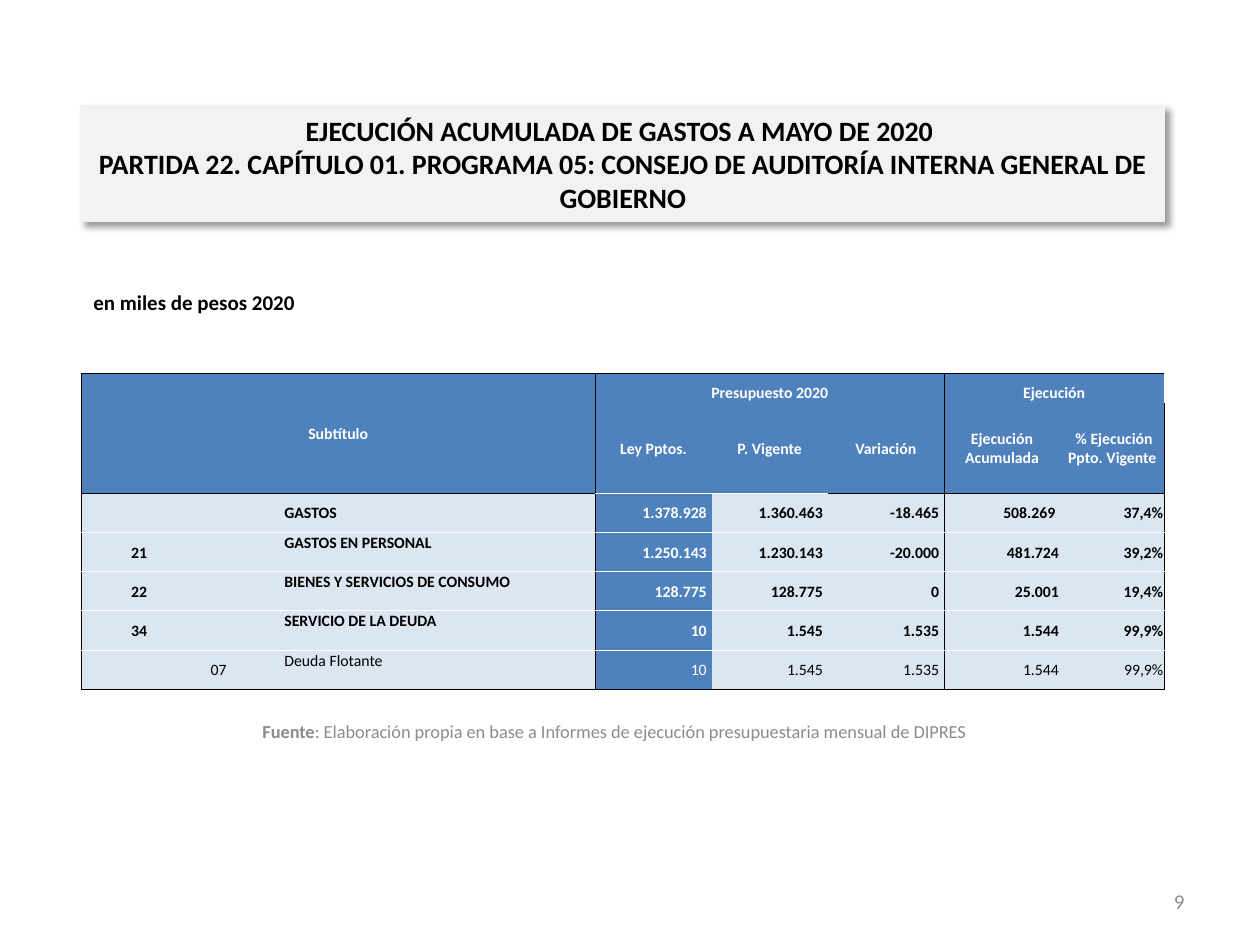
from lxml import etree
from pptx import Presentation
from pptx.dml.color import RGBColor
from pptx.enum import text as t
from pptx.oxml import ns
from pptx.util import Pt

COLORS = {"black": "000000", "white": "FFFFFF", "gray": "8C8C8C",
          "banner": "F2F2F2", "blue": "4F81BD", "pale": "DCE6F1"}
FONT = "Calibri"

TITLE = ("EJECUCIÓN ACUMULADA DE GASTOS A MAYO DE 2020 \v"
         "PARTIDA 22. CAPÍTULO 01. PROGRAMA 05: "
         "CONSEJO DE AUDITORÍA INTERNA GENERAL DE GOBIERNO")
UNITS = "en miles de pesos 2020"
SOURCE = ("Fuente", ": Elaboración propia en base a Informes de ejecución "
          "presupuestaria mensual de DIPRES")
PAGE = "9"

ROWS = [
    ["Subtítulo", "", "", "", "Presupuesto 2020", "", "", "Ejecución", ""],
    ["", "", "", "", "Ley Pptos.", "P. Vigente", "Variación",
     "Ejecución Acumulada", " % Ejecución Ppto. Vigente"],
    ["", "", "", "GASTOS",
     "1.378.928", "1.360.463", "-18.465", "508.269 ", "37,4%"],
    ["21", "", "", "GASTOS EN PERSONAL",
     "1.250.143", "1.230.143", "-20.000", "481.724", "39,2%"],
    ["22", "", "", "BIENES Y SERVICIOS DE CONSUMO",
     "128.775", "128.775", "0", "25.001", "19,4%"],
    ["34", "", "", "SERVICIO DE LA DEUDA",
     "10", "1.545", "1.535", "1.544", "99,9%"],
    ["", "07", "", "Deuda Flotante",
     "10", "1.545", "1.535", "1.544", "99,9%"],
]
MERGES = [((0, 0), (1, 3)), ((0, 4), (0, 6)), ((0, 7), (0, 8))]
WIDTHS = [66.4, 24.6, 24.6, 178.4, 66.4, 66.4, 66.4, 66.4, 59.6]
HEIGHTS = [17.2, 51.6] + [22.4] * 5
HEAD = 2              # header rows
LABEL, LAW = 3, 4     # columns with the item name and the budget law
GROUPS = (0, 4, 7, 9)  # column edges with a black rule
LEFT, WIDE = 46.3, 619.2


def rgb(name):
    return RGBColor.from_string(COLORS[name])


def style(run, size, color, bold=False):
    run.font.name = FONT
    run.font.size = Pt(size)
    run.font.bold = bold
    run.font.color.rgb = rgb(color)


def add_text(slide, box, parts, size, color, align, anchor):
    """Adds a one-line text box from (wording, bold) parts."""
    frame = slide.shapes.add_textbox(*map(Pt, box)).text_frame
    frame.word_wrap = True
    frame.vertical_anchor = anchor
    para = frame.paragraphs[0]
    para.alignment = align
    for words, bold in parts:
        run = para.add_run()
        run.text = words
        style(run, size, color, bold)


def add_title(slide):
    shape = slide.shapes.title
    shape.left, shape.top, shape.width, shape.height = map(
        Pt, (LEFT, 60.5, WIDE, 66.2))
    shape.fill.solid()
    shape.fill.fore_color.rgb = rgb("banner")
    shape.line.color.rgb = rgb("banner")
    shape.line.width = Pt(0.75)
    frame = shape.text_frame
    frame.text = TITLE
    frame.word_wrap = True
    frame.auto_size = t.MSO_AUTO_SIZE.NONE
    frame.vertical_anchor = t.MSO_ANCHOR.MIDDLE
    frame.margin_left = frame.margin_right = Pt(7.9)
    frame.margin_top = frame.margin_bottom = Pt(3.6)
    frame.paragraphs[0].alignment = t.PP_ALIGN.CENTER
    for run in frame.paragraphs[0].runs:
        style(run, 16, "black", True)
    effects = etree.SubElement(shape._element.spPr, ns.qn("a:effectLst"))
    shadow = etree.SubElement(
        effects, ns.qn("a:outerShdw"), blurRad=str(Pt(4)), dist=str(Pt(3)),
        dir=str(45 * 60000), algn="tl", rotWithShape="0")
    tint = etree.SubElement(shadow, ns.qn("a:srgbClr"), val=COLORS["black"])
    etree.SubElement(tint, ns.qn("a:alpha"), val="40000")


def rule_down(edge):
    return "black" if edge in GROUPS else None


def rule_across(edge, col):
    if edge in (0, len(ROWS)):
        return "black"
    if edge < HEAD:
        return None
    return "black" if edge == HEAD and col not in (LAW, LAW + 1) else "white"


def set_borders(cell, row, col):
    props = cell._tc.get_or_add_tcPr()
    sides = {"L": rule_down(col), "R": rule_down(col + 1),
             "T": rule_across(row, col), "B": rule_across(row + 1, col)}
    for side, color in sides.items():
        line = etree.SubElement(props, ns.qn("a:ln" + side), w=str(Pt(0.5)))
        if color:
            fill = etree.SubElement(line, ns.qn("a:solidFill"))
            etree.SubElement(fill, ns.qn("a:srgbClr"), val=COLORS[color])
        else:
            etree.SubElement(line, ns.qn("a:noFill"))


def fill_cell(cell, row, col, words):
    head = row < HEAD
    blue = head or col == LAW
    set_borders(cell, row, col)
    cell.fill.solid()
    cell.fill.fore_color.rgb = rgb("blue" if blue else "pale")
    cell.margin_left = cell.margin_top = Pt(0.7)
    cell.margin_right = Pt(2.8 if not head and LAW <= col <= 6 else 0.7)
    cell.margin_bottom = 0
    cell.vertical_anchor = t.MSO_ANCHOR.MIDDLE
    if row == 0 and col >= LAW:
        cell.vertical_anchor = t.MSO_ANCHOR.BOTTOM
    elif row > HEAD and col == LABEL:
        cell.vertical_anchor = t.MSO_ANCHOR.TOP
    para = cell.text_frame.paragraphs[0]
    para.text = words
    if head or col < LABEL:
        para.alignment = t.PP_ALIGN.CENTER
    else:
        para.alignment = (t.PP_ALIGN.LEFT if col == LABEL
                          else t.PP_ALIGN.RIGHT)
    for run in para.runs:
        style(run, 9, "white" if blue else "black", row < len(ROWS) - 1)
    if not words:  # keeps empty cells from growing the row
        etree.SubElement(para._p, ns.qn("a:endParaRPr"), sz="900")


def add_grid(slide):
    grid = slide.shapes.add_table(
        len(ROWS), len(WIDTHS), Pt(LEFT), Pt(213.1),
        Pt(sum(WIDTHS)), Pt(sum(HEIGHTS))).table
    for col, width in zip(grid.columns, WIDTHS):
        col.width = Pt(width)
    for row, height in zip(grid.rows, HEIGHTS):
        row.height = Pt(height)
    for r, row in enumerate(ROWS):
        for c, words in enumerate(row):
            fill_cell(grid.cell(r, c), r, c, words)
    for first, last in MERGES:
        grid.cell(*first).merge(grid.cell(*last))


def main():
    deck = Presentation()
    deck.slide_width, deck.slide_height = Pt(720), Pt(540)
    slide = deck.slides.add_slide(deck.slide_layouts[5])
    add_title(slide)
    add_text(slide, (LEFT, 162, WIDE, 23.8), [(UNITS, True)], 12, "black",
             t.PP_ALIGN.LEFT, t.MSO_ANCHOR.TOP)
    add_grid(slide)
    add_text(slide, (LEFT, 400.3, 609.8, 34.6),
             [(SOURCE[0], True), (SOURCE[1], False)], 10.5, "gray",
             t.PP_ALIGN.CENTER, t.MSO_ANCHOR.MIDDLE)
    add_text(slide, (516.2, 500.4, 167.8, 28.8), [(PAGE, False)], 12, "gray",
             t.PP_ALIGN.RIGHT, t.MSO_ANCHOR.MIDDLE)
    deck.save("out.pptx")


if __name__ == "__main__":
    main()
